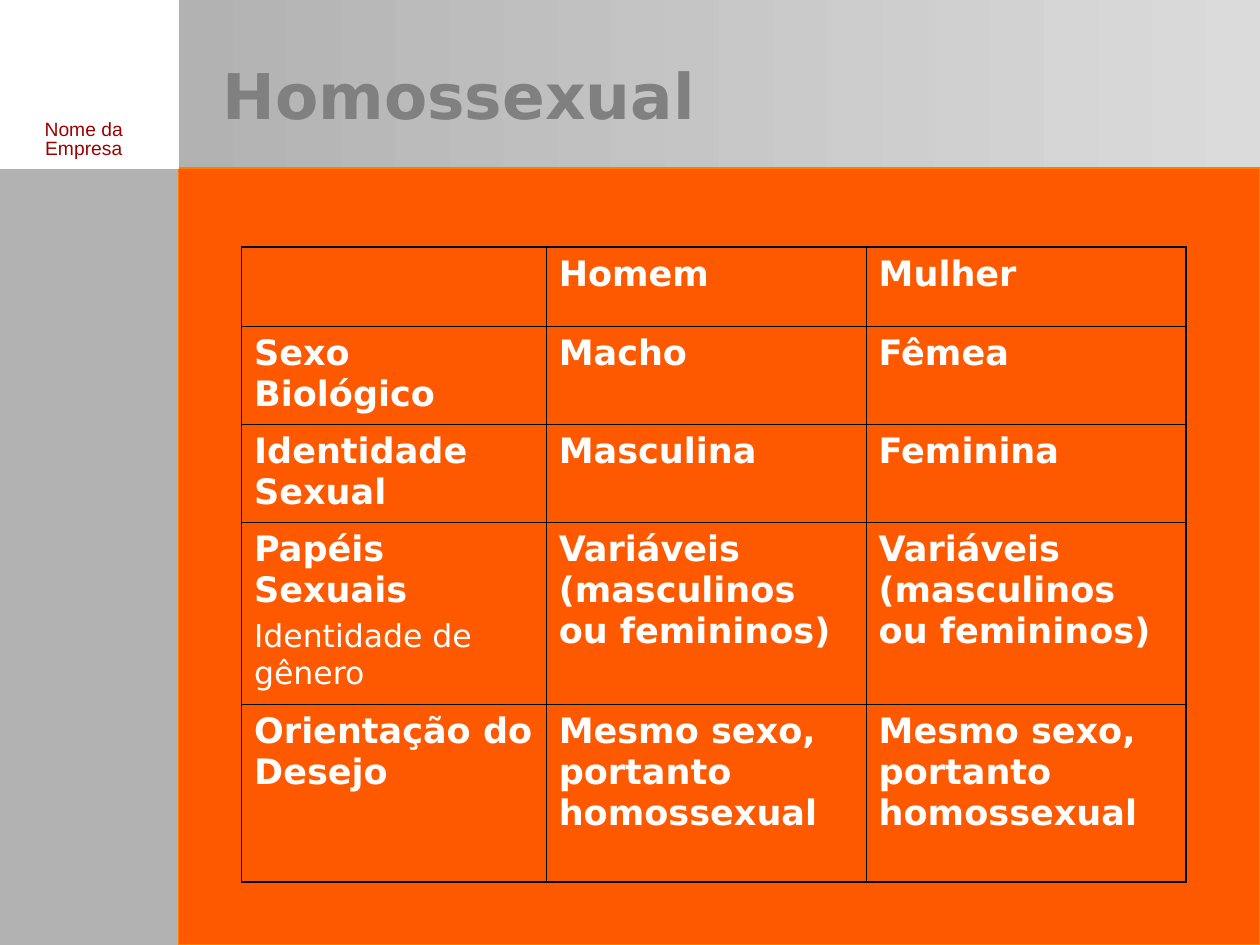
"""Builds the slide "Homossexual" with its comparison table."""
from lxml import etree
from pptx import Presentation
from pptx.dml.color import RGBColor
from pptx.enum import shapes, text
from pptx.oxml import ns
from pptx.util import Cm, Pt

C = {"white": "FFFFFF", "gray": "B2B2B2", "light": "DBDBDB", "orange": "FF5900",
     "edge": "FF7D00", "title": "808080", "red": "9E0000", "border": "000000"}
TITLE = "Homossexual"
LABEL = ["Nome da", "Empresa"]
ROWS = [
    ([], ["Homem"], ["Mulher"]),
    (["Sexo Biológico"], ["Macho"], ["Fêmea"]),
    (["Identidade Sexual"], ["Masculina"], ["Feminina"]),
    (["Papéis Sexuais", "Identidade de gênero"],
     *[["Variáveis (masculinos ou femininos)"]] * 2),
    (["Orientação do Desejo"], *[["Mesmo sexo, portanto homossexual"]] * 2),
]
COLS = [6.14, 6.45, 6.45]
HEIGHTS = [1.6, 1.97, 1.97, 3.68, 3.58]
W, H = 25.4, 19.05
SIDE, TOP = 3.6, 3.39
THIN, THICK = 0.45, 1.08


def color(name):
    return RGBColor.from_string(C[name])


def add_rect(s, box, fill, line=None):
    sp = s.shapes.add_shape(shapes.MSO_SHAPE.RECTANGLE, *map(Cm, box))
    sp.shadow.inherit = False
    if isinstance(fill, tuple):
        sp.fill.gradient()
        sp.fill.gradient_angle = 0
        for stop, name in zip(sp.fill.gradient_stops, fill):
            stop.color.rgb = color(name)
    else:
        sp.fill.solid()
        sp.fill.fore_color.rgb = color(fill)
    if line:
        sp.line.color.rgb = color(line)
        sp.line.width = Pt(0.75)
    else:
        sp.line.fill.background()


def add_par(tf, words, first=True, size=20, font="DejaVu Sans", fill="white",
            bold=True, spacing=None, before=0, align=text.PP_ALIGN.LEFT):
    p = tf.paragraphs[0] if first else tf.add_paragraph()
    p.alignment = align
    if spacing:
        p.line_spacing = spacing
    p.space_before = Pt(before)
    r = p.add_run()
    r.text = words
    r.font.size, r.font.name, r.font.bold = Pt(size), font, bold
    r.font.color.rgb = color(fill)


def add_box(s, box, anchor=text.MSO_ANCHOR.TOP):
    tf = s.shapes.add_textbox(*map(Cm, box)).text_frame
    tf.word_wrap = True
    tf.vertical_anchor = anchor
    return tf


def set_borders(cell, widths):
    pr = cell._tc.get_or_add_tcPr()
    for i, (side, width) in enumerate(zip("LRTB", widths)):
        ln = etree.Element(ns.qn(f"a:ln{side}"), w=str(int(Pt(width))))
        fill = etree.SubElement(ln, ns.qn("a:solidFill"))
        etree.SubElement(fill, ns.qn("a:srgbClr"), val=C["border"])
        pr.insert(i, ln)


def add_grid(s):
    last_row, last_col = len(ROWS) - 1, len(COLS) - 1
    frame = s.shapes.add_table(len(ROWS), len(COLS), Cm(4.87), Cm(4.98),
                               Cm(sum(COLS)), Cm(sum(HEIGHTS)))
    table = frame.table
    table.first_row = table.horz_banding = False
    for col, width in zip(table.columns, COLS):
        col.width = Cm(width)
    for i, (row, height) in enumerate(zip(ROWS, HEIGHTS)):
        table.rows[i].height = Cm(height)
        for j, pars in enumerate(row):
            cell = table.cell(i, j)
            cell.fill.background()
            outer = (j == 0, j == last_col, i == 0, i == last_row)
            set_borders(cell, [THICK if edge else THIN for edge in outer])
            for k, words in enumerate(pars):
                style = dict(size=18, bold=False, before=4.5) if k else {}
                add_par(cell.text_frame, words, k == 0, spacing=1.01, **style)


def main():
    prs = Presentation()
    prs.slide_width, prs.slide_height = Cm(W), Cm(H)
    s = prs.slides.add_slide(prs.slide_layouts[6])
    add_rect(s, (SIDE, 0, W - SIDE, H), ("gray", "light"))
    add_rect(s, (0, TOP, SIDE, H - TOP), "gray", "gray")
    add_rect(s, (SIDE, TOP, W - SIDE, H - TOP), "orange", "edge")
    add_par(add_box(s, (4.24, 0.64, 11, 2.54), text.MSO_ANCHOR.MIDDLE), TITLE,
            size=36, fill="title")
    add_grid(s)
    add_rect(s, (0, 0, SIDE, TOP), "white", "white")
    tf = add_box(s, (0, 2.33, 3.38, 1.02))
    for k, words in enumerate(LABEL):
        add_par(tf, words, k == 0, size=11, font="Arial", fill="red", bold=False,
                spacing=0.8, align=text.PP_ALIGN.CENTER)
    prs.save("out.pptx")


if __name__ == "__main__":
    main()
